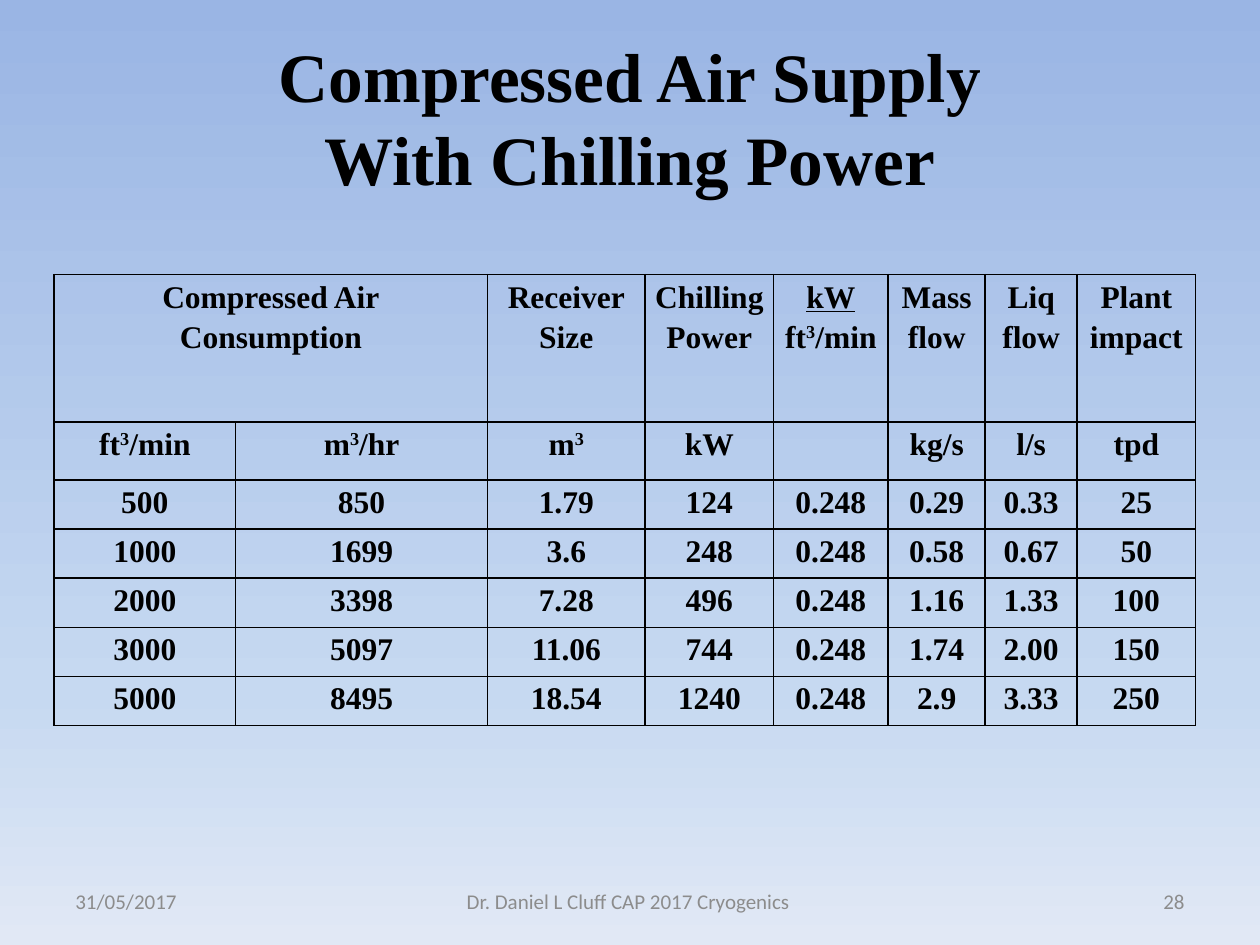
from copy import deepcopy
from lxml.etree import SubElement
from pptx import Presentation
from pptx.dml.color import RGBColor
from pptx.enum.text import MSO_ANCHOR, PP_ALIGN as Align
from pptx.oxml.ns import qn
from pptx.util import Inches, Pt

BLACK = RGBColor(0, 0, 0)
GREY = RGBColor(0x8C, 0x8C, 0x8C)
SKY = [(0, "9AB5E4"), (73, "C6D9F1"), (100, "E1E8F5")]

SERIF = {"name": "Times New Roman", "bold": True}
TITLE = {**SERIF, "size": Pt(39.6)}
CELL = {**SERIF, "size": Pt(18)}
FOOT = {"name": "Calibri", "size": Pt(12)}

HEAD = "Compressed Air Supply\vWith Chilling Power"
# "\n" parts paragraphs, "^" raises the next sign, "_" underlines a line
ROWS = [
    ["Compressed Air\nConsumption", "", "Receiver\nSize", "Chilling\nPower",
     "_kW\nft^3/min", "Mass flow", "Liq flow", "Plant impact"],
    ["ft^3/min", "m^3/hr", "m^3", "kW", "", "kg/s", "l/s", "tpd"],
    ["500", "850", "1.79", "124", "0.248", "0.29", "0.33", "25"],
    ["1000", "1699", "3.6", "248", "0.248", "0.58", "0.67", "50"],
    ["2000", "3398", "7.28", "496", "0.248", "1.16", "1.33", "100"],
    ["3000", "5097", "11.06", "744", "0.248", "1.74", "2.00", "150"],
    ["5000", "8495", "18.54", "1240", "0.248", "2.9", "3.33", "250"],
]
WIDTHS = [1.44, 2, 1.25, 1.02, 0.91, 0.77, 0.73, 0.94]
HEIGHTS = [1.17, 0.46] + [0.39] * 5
FOOTERS = [
    (0.5, 2.33, Align.LEFT, "31/05/2017"),
    (3.42, 3.17, Align.CENTER, "Dr. Daniel L Cluff CAP 2017 Cryogenics "),
    (7.17, 2.33, Align.RIGHT, "28"),
]


def style(font, form, color):
    for key, value in form.items():
        setattr(font, key, value)
    font.color.rgb = color


def paint_sky(slide):
    fill = slide.background.fill
    fill.gradient()
    fill.gradient_angle = 270
    stops = fill.gradient_stops
    first = slide.background._cSld.find(".//" + qn("a:gs"))
    first.addnext(deepcopy(first))
    for stop, (share, color) in zip(fill.gradient_stops, SKY):
        stop.color.rgb = RGBColor.from_string(color)
        stop.position = share / 100


def add_run(para, text, raised=False, under=False):
    if text:
        run = para.add_run()
        run.text = text
        style(run.font, CELL, BLACK)
        if under:
            run.font.underline = True
        if raised:
            run.font._element.set("baseline", "30000")


def write(cell, text):
    frame = cell.text_frame
    for i, line in enumerate(text.split("\n")):
        para = frame.add_paragraph() if i else frame.paragraphs[0]
        para.alignment = Align.CENTER
        para.line_spacing = 1.15
        style(para.font, CELL, BLACK)
        base, *rest = line.lstrip("_").split("^")
        add_run(para, base, under=line.startswith("_"))
        for part in rest:
            add_run(para, part[0], raised=True)
            add_run(para, part[1:])


def frame_cell(cell):
    cell.margin_left = cell.margin_right = Inches(0.07)
    cell.margin_top = cell.margin_bottom = 0
    props = cell._tc.get_or_add_tcPr()
    for side in ("lnL", "lnR", "lnT", "lnB"):
        line = SubElement(props, qn("a:" + side), w=str(Pt(1)))
        fill = SubElement(line, qn("a:solidFill"))
        SubElement(fill, qn("a:srgbClr"), val=str(BLACK))
    cell.fill.background()


def add_grid(slide):
    box = slide.shapes.add_table(
        len(ROWS), len(WIDTHS), Inches(0.43), Inches(2.18),
        Inches(sum(WIDTHS)), Inches(sum(HEIGHTS)))
    table = box.table
    table.first_row = table.horz_banding = False
    for col, width in zip(table.columns, WIDTHS):
        col.width = Inches(width)
    for row, height, texts in zip(table.rows, HEIGHTS, ROWS):
        row.height = Inches(height)
        for cell, text in zip(row.cells, texts):
            frame_cell(cell)
            write(cell, text)
    table.cell(0, 0).merge(table.cell(0, 1))


def add_footer(slide, left, width, align, text):
    box = slide.shapes.add_textbox(
        Inches(left), Inches(6.95), Inches(width), Inches(0.4))
    frame = box.text_frame
    frame.word_wrap = True
    frame.vertical_anchor = MSO_ANCHOR.MIDDLE
    para = frame.paragraphs[0]
    para.alignment = align
    run = para.add_run()
    run.text = text
    style(run.font, FOOT, GREY)


def main():
    deck = Presentation()
    deck.slide_width, deck.slide_height = Inches(10), Inches(7.5)
    slide = deck.slides.add_slide(deck.slide_layouts[5])
    paint_sky(slide)

    title = slide.shapes.title
    title.left, title.top, title.width, title.height = map(
        Inches, (0.5, 0.3, 9, 1.25))
    title.text_frame.vertical_anchor = MSO_ANCHOR.MIDDLE
    para = title.text_frame.paragraphs[0]
    para.text = HEAD
    para.alignment = Align.CENTER
    for run in para.runs:
        style(run.font, TITLE, BLACK)

    add_grid(slide)
    for footer in FOOTERS:
        add_footer(slide, *footer)
    deck.save("out.pptx")


if __name__ == "__main__":
    main()
